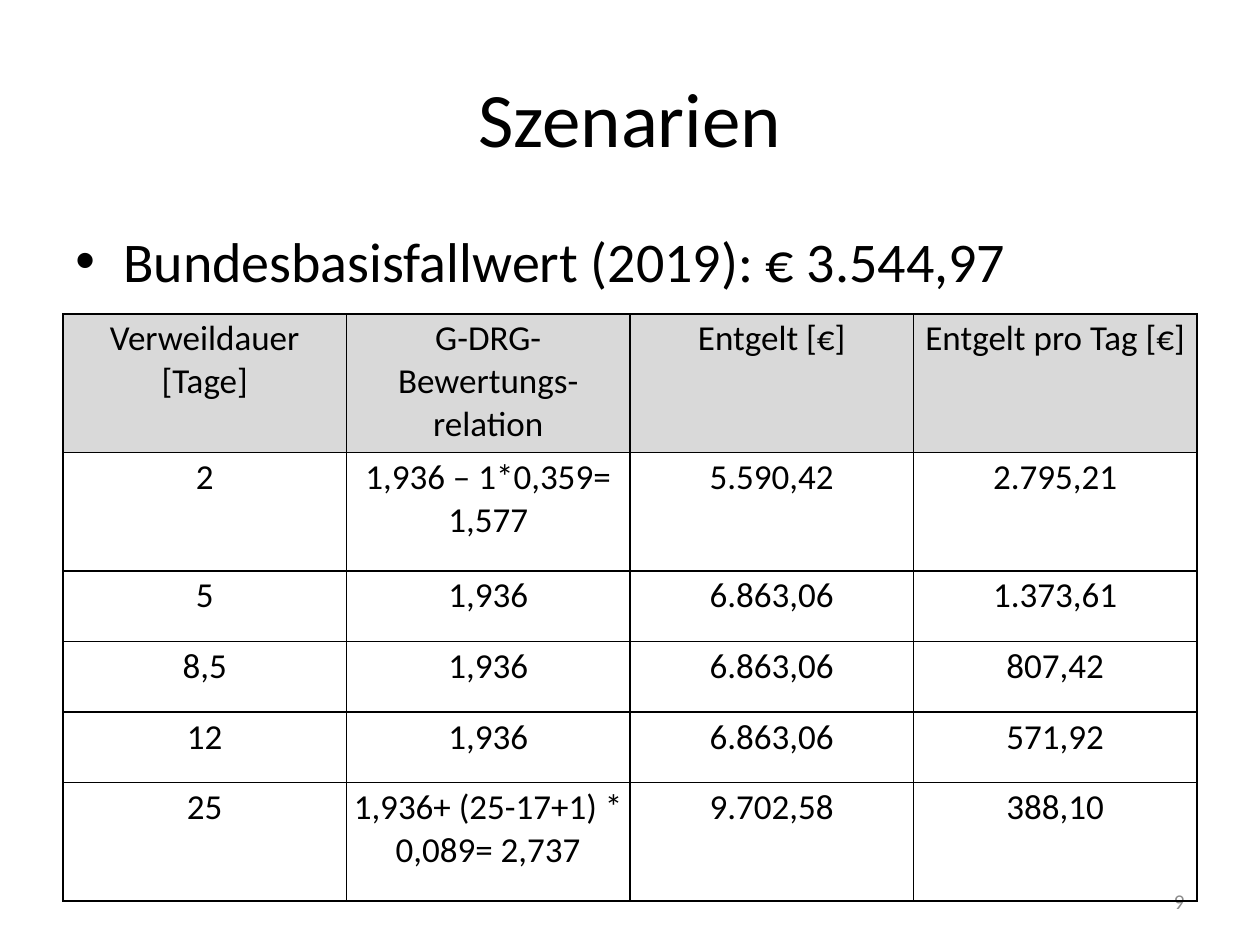
from dataclasses import dataclass
from typing import Optional

from lxml import etree
from pptx import Presentation
from pptx import util as u
from pptx.dml.color import RGBColor
from pptx.enum import text
from pptx.oxml import ns


@dataclass(frozen=True)
class Theme:
    font: str = "Calibri"
    ink: str = "000000"
    muted: str = "8C8C8C"
    header_fill: str = "D9D9D9"
    title_size: float = 44
    body_size: float = 32
    table_size: float = 20
    number_size: float = 12
    border_width: float = 1


@dataclass(frozen=True)
class Box:
    left: float
    top: float
    width: float
    height: float

    def lengths(self) -> tuple:
        return tuple(u.Inches(n) for n in (self.left, self.top, self.width, self.height))


@dataclass(frozen=True)
class Scenario:
    days: str
    weight: str
    payment: str
    daily_payment: str
    height: float

    def values(self) -> tuple:
        return self.days, self.weight, self.payment, self.daily_payment


THEME = Theme()
TABLE_BOX = Box(0.5, 2.49, 9, 4.66)
CELL_MARGIN = 0.03
BULLET_INDENT = 0.38

SCENARIOS = [
    Scenario("Verweildauer [Tage]", "G-DRG-Bewertungs-relation",
             "Entgelt [€]", "Entgelt pro Tag [€]", 1.1),
    Scenario("2", "1,936 – 1*0,359= 1,577", "5.590,42", "2.795,21", 0.94),
    Scenario("5", "1,936", "6.863,06", "1.373,61", 0.56),
    Scenario("8,5", "1,936", "6.863,06", "807,42", 0.56),
    Scenario("12", "1,936", "6.863,06", "571,92", 0.56),
    Scenario("25", "1,936+ (25-17+1) * 0,089= 2,737", "9.702,58", "388,10", 0.94),
]


def write_text(frame, content: str, *, size: float, color: str = THEME.ink,
               align=text.PP_ALIGN.LEFT, before: float = 0, after: float = 0,
               bullet: Optional[str] = None) -> None:
    paragraph = frame.paragraphs[0]
    paragraph.alignment = align
    paragraph.space_before, paragraph.space_after = u.Pt(before), u.Pt(after)
    run = paragraph.add_run()
    run.text = content
    run.font.name, run.font.size = THEME.font, u.Pt(size)
    run.font.color.rgb = RGBColor.from_string(color)
    if bullet:
        properties = paragraph._p.get_or_add_pPr()
        properties.set("marL", str(u.Inches(BULLET_INDENT)))
        properties.set("indent", str(-u.Inches(BULLET_INDENT)))
        etree.SubElement(properties, ns.qn("a:buFont"), typeface="Arial")
        etree.SubElement(properties, ns.qn("a:buChar"), char=bullet)


def add_text(slide, box: Box, content: str, *, anchor=text.MSO_ANCHOR.TOP, **style) -> None:
    frame = slide.shapes.add_textbox(*box.lengths()).text_frame
    frame.word_wrap = True
    frame.vertical_anchor = anchor
    write_text(frame, content, **style)


def add_borders(cell) -> None:
    properties = cell._tc.get_or_add_tcPr()
    for side in ("lnL", "lnR", "lnT", "lnB"):
        line = etree.SubElement(properties, ns.qn(f"a:{side}"), w=str(u.Pt(THEME.border_width)))
        fill = etree.SubElement(line, ns.qn("a:solidFill"))
        etree.SubElement(fill, ns.qn("a:srgbClr"), val=THEME.ink)


def fill_cell(cell, content: str, is_header: bool) -> None:
    margin = u.Inches(CELL_MARGIN)
    cell.margin_left = cell.margin_right = cell.margin_top = cell.margin_bottom = margin
    add_borders(cell)
    if is_header:
        cell.fill.solid()
        cell.fill.fore_color.rgb = RGBColor.from_string(THEME.header_fill)
    else:
        cell.fill.background()
    write_text(cell.text_frame, content, size=THEME.table_size,
               align=text.PP_ALIGN.CENTER, before=2, after=4)


def add_scenario_table(slide, box: Box, scenarios: list[Scenario]) -> None:
    column_count = len(scenarios[0].values())
    table = slide.shapes.add_table(len(scenarios), column_count, *box.lengths()).table
    table.horz_banding = False
    for column in table.columns:
        column.width = u.Inches(box.width / column_count)
    for row_index, scenario in enumerate(scenarios):
        table.rows[row_index].height = u.Inches(scenario.height)
        for column_index, value in enumerate(scenario.values()):
            fill_cell(table.cell(row_index, column_index), value, row_index == 0)


def main() -> None:
    presentation = Presentation()
    presentation.slide_width, presentation.slide_height = u.Inches(10), u.Inches(7.5)
    slide = presentation.slides.add_slide(presentation.slide_layouts[6])

    # Title and base rate
    add_text(slide, Box(0.5, 0.3, 9, 1.25), "Szenarien", size=THEME.title_size,
             align=text.PP_ALIGN.CENTER, anchor=text.MSO_ANCHOR.MIDDLE)
    add_text(slide, Box(0.5, 1.75, 9, 0.74), "Bundesbasisfallwert (2019): € 3.544,97",
             size=THEME.body_size, before=6.4, bullet="•")

    # Page number, behind the table
    add_text(slide, Box(7.17, 6.95, 2.33, 0.4), "9", size=THEME.number_size,
             color=THEME.muted, align=text.PP_ALIGN.RIGHT, anchor=text.MSO_ANCHOR.MIDDLE)

    # Payment by length of stay
    add_scenario_table(slide, TABLE_BOX, SCENARIOS)

    presentation.save("out.pptx")


if __name__ == "__main__":
    main()
